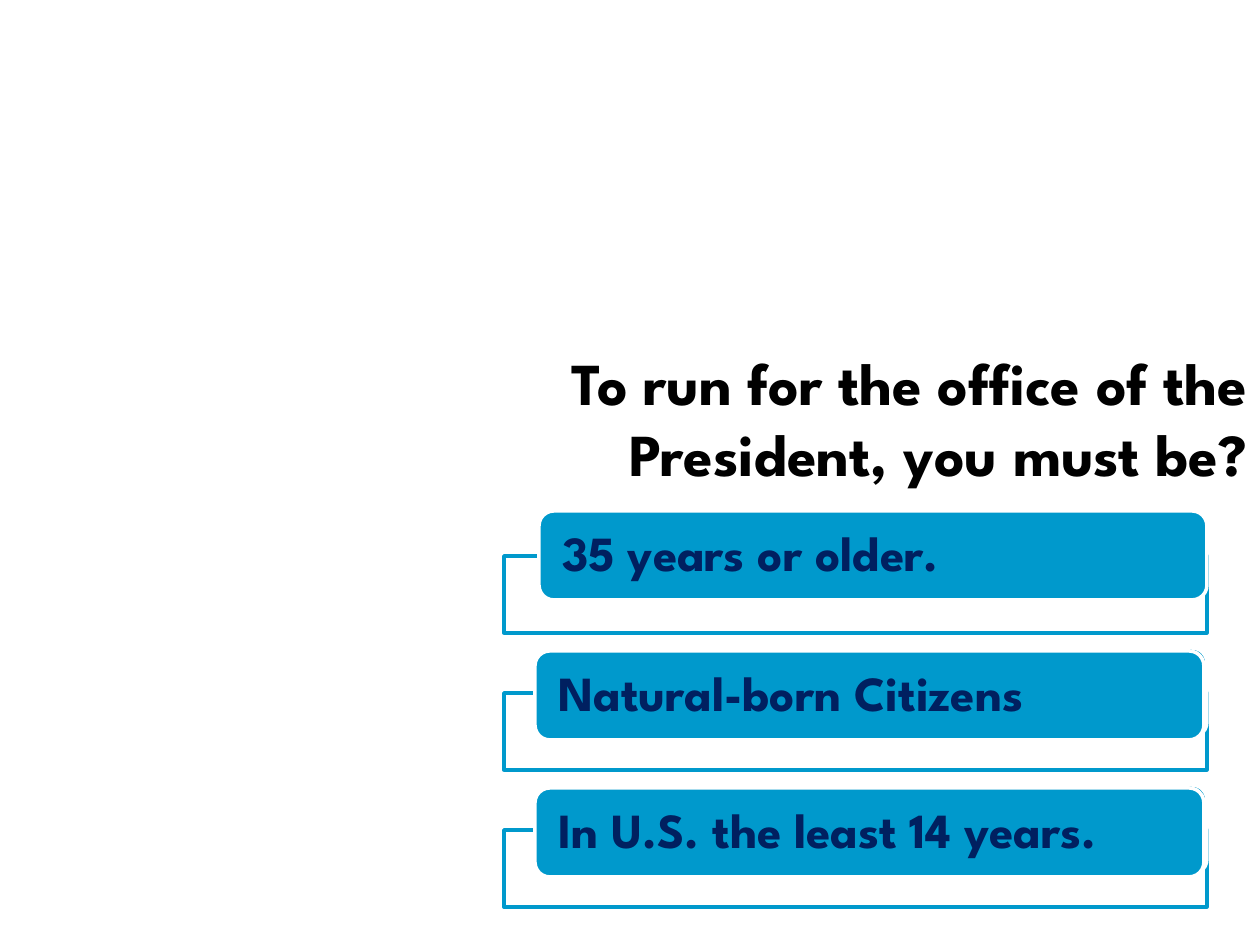
from dataclasses import dataclass

from lxml.etree import SubElement
from pptx import Presentation
from pptx.dml.color import RGBColor
from pptx.enum.shapes import MSO_SHAPE
from pptx.enum.text import MSO_ANCHOR, MSO_AUTO_SIZE, PP_ALIGN
from pptx.oxml.ns import qn
from pptx.util import Pt

EMU_PER_PX = 914400 / 126


def px(length):
    return round(length * EMU_PER_PX)


@dataclass(frozen=True)
class Theme:
    font: str = "League Spartan"
    white: RGBColor = RGBColor(0xFF, 0xFF, 0xFF)
    black: RGBColor = RGBColor(0x00, 0x00, 0x00)
    blue: RGBColor = RGBColor(0x00, 0x99, 0xCC)
    navy: RGBColor = RGBColor(0x00, 0x20, 0x60)
    title_size: int = 34
    answer_size: int = 28
    line_width: int = 2


class SlideBuilder:
    def __init__(self, slide, theme):
        self.slide = slide
        self.theme = theme

    def style_paragraph(self, paragraph, size, color, align):
        paragraph.alignment = align
        font = paragraph.font
        font.name, font.size, font.bold = self.theme.font, Pt(size), True
        font.color.rgb = color

    def title(self, text, left, top, width, height):
        box = self.slide.shapes.title
        box.left, box.top, box.width, box.height = map(px, (left, top, width, height))
        frame = box.text_frame
        frame.text = text
        frame.word_wrap = True
        frame.auto_size = MSO_AUTO_SIZE.NONE
        frame.vertical_anchor = MSO_ANCHOR.BOTTOM
        self.style_paragraph(frame.paragraphs[0], self.theme.title_size,
                             self.theme.black, PP_ALIGN.RIGHT)

    def shape(self, kind, bounds, fill, line):
        shape = self.slide.shapes.add_shape(kind, *map(px, bounds))
        shape.shadow.inherit = False
        shape.fill.solid()
        shape.fill.fore_color.rgb = fill
        shape.line.color.rgb = line
        shape.line.width = Pt(self.theme.line_width)
        return shape

    def frame(self, left, top, width, height):
        shape = self.shape(MSO_SHAPE.RECTANGLE, (left, top, width, height),
                           self.theme.white, self.theme.blue)
        color = shape.fill._xPr.find(qn("a:solidFill"))[0]
        SubElement(color, qn("a:alpha"), val="90000")

    def bar(self, left, top, width, height, text=None):
        shape = self.shape(MSO_SHAPE.ROUNDED_RECTANGLE, (left, top, width, height),
                           self.theme.blue, self.theme.white)
        if text is None:
            return
        frame = shape.text_frame
        frame.text = text
        frame.word_wrap = True
        frame.vertical_anchor = MSO_ANCHOR.MIDDLE
        frame.margin_left = frame.margin_right = px(19)
        frame.margin_top = frame.margin_bottom = 0
        paragraph = frame.paragraphs[0]
        paragraph.line_spacing = 0.9
        self.style_paragraph(paragraph, self.theme.answer_size,
                             self.theme.navy, PP_ALIGN.LEFT)


def main():
    deck = Presentation()
    deck.slide_width, deck.slide_height = px(1260), px(945)
    slide = deck.slides.add_slide(deck.slide_layouts[0])
    subtitle = slide.placeholders[1].element
    subtitle.getparent().remove(subtitle)
    page = SlideBuilder(slide, Theme())

    # Question
    page.title("To run for the office of the President, you must be?",
               431, 325, 829, 170)

    # Three framed bars, the first one holding its answer
    for row, answer in enumerate(("35 years or older.", None, None)):
        page.frame(504, 556 + 137 * row, 703, 77)
        page.bar(539, 511 + 137 * row, 668, 89, answer)

    # Remaining answers, laid over the lower bars
    for row, answer in enumerate(("Natural-born Citizens", "In U.S. the least 14 years.")):
        page.bar(535, 651 + 137 * row, 669, 89, answer)

    deck.save("out.pptx")


if __name__ == "__main__":
    main()
